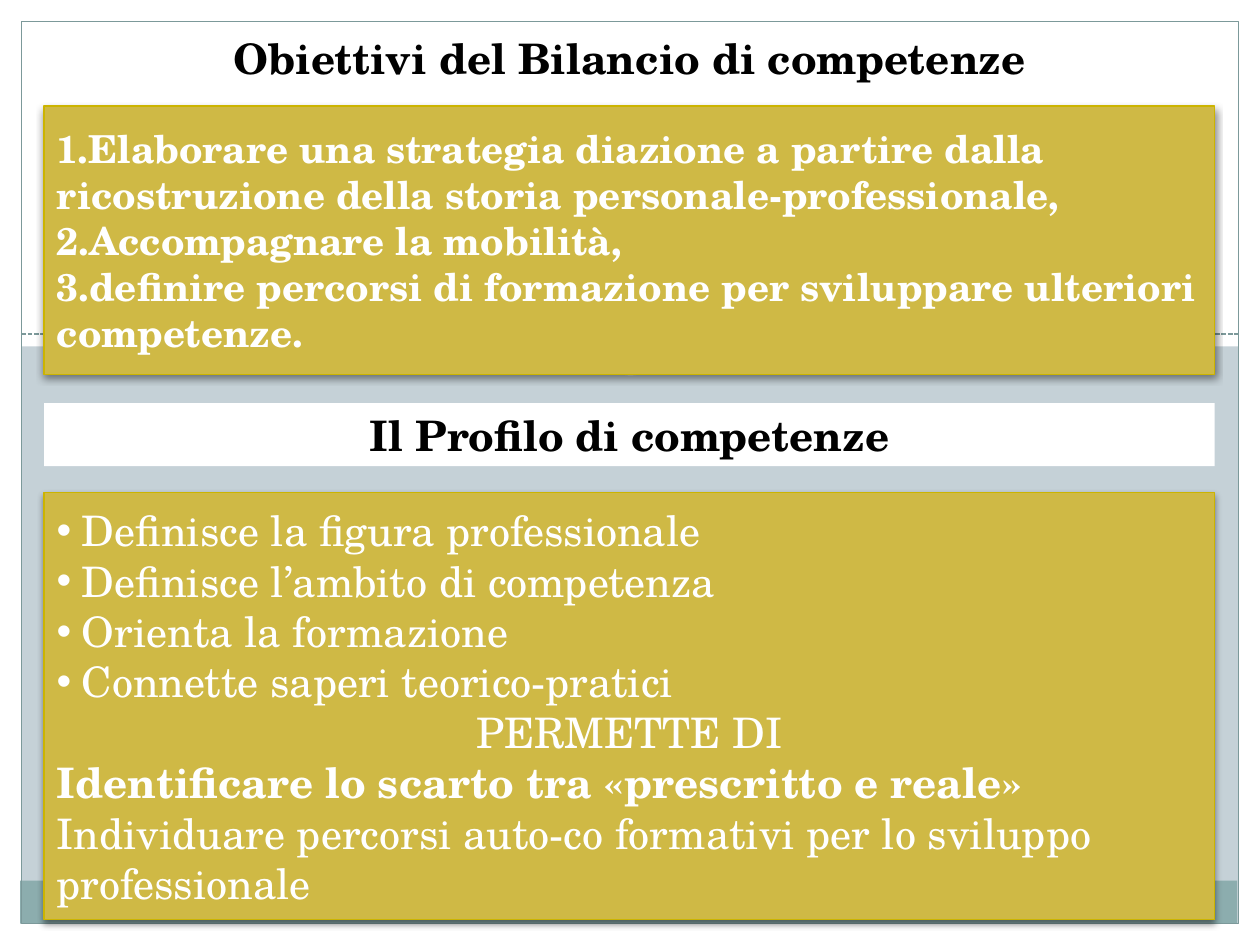
from lxml import etree
from pptx import Presentation
from pptx.dml.color import RGBColor
from pptx.enum.dml import MSO_LINE
from pptx.enum.shapes import MSO_CONNECTOR, MSO_SHAPE
from pptx.enum.text import MSO_ANCHOR, MSO_AUTO_SIZE, PP_ALIGN
from pptx.oxml import parse_xml
from pptx.oxml.ns import nsdecls, qn
from pptx.util import Inches, Pt

RECT, OVAL = MSO_SHAPE.RECTANGLE, MSO_SHAPE.OVAL
LEFT, CENTER = PP_ALIGN.LEFT, PP_ALIGN.CENTER
MIDDLE, NO_FIT = MSO_ANCHOR.MIDDLE, MSO_AUTO_SIZE.NONE
WHITE = RGBColor(0xFF, 0xFF, 0xFF)
BLACK = RGBColor(0, 0, 0)
BACKGROUND = RGBColor(0xC5, 0xD1, 0xD7)
TEAL = RGBColor(0x8C, 0xAD, 0xAE)
FRAME = RGBColor(0x7C, 0x99, 0x9A)
GOLD = RGBColor(0xCF, 0xB9, 0x45)
GOLD_EDGE = RGBColor(0xCC, 0xB4, 0x00)
FONT = "TeX Gyre Schola"
BOX_LEFT, BOX_WIDTH = 0.35, 9.29

DECOR = [
    (RECT, (0, 7.33, 10, 0.17), WHITE, None),
    (RECT, (9.83, 0, 0.17, 7.5), WHITE, None),
    (RECT, (0, 0, 0.17, 7.5), WHITE, None),
    (RECT, (0, 0, 10, 2.75), WHITE, None),
    (RECT, (0.16, 6.99, 9.66, 0.34), TEAL, None),
    (RECT, (0.17, 0.17, 9.66, 7.16), None, FRAME),
    (OVAL, (4.67, 2.31, 0.67, 0.67), WHITE, None),
]

TITLE = [("Obiettivi del Bilancio di competenze", None, CENTER, True)]
GOALS = [
    ("Elaborare una strategia diazione a partire dalla ricostruzione della "
     "storia personale-professionale,", "number", LEFT, True),
    ("Accompagnare la mobilità,", "number", LEFT, True),
    ("definire percorsi di formazione per sviluppare ulteriori competenze.",
     "number", LEFT, True),
]
PROFILE_TITLE = [("Il Profilo di competenze", None, CENTER, True)]
PROFILE = [
    ("Definisce la figura professionale", "bullet", LEFT, False),
    ("Definisce l’ambito di competenza", "bullet", LEFT, False),
    ("Orienta la formazione", "bullet", LEFT, False),
    ("Connette saperi teorico-pratici", "bullet", LEFT, False),
    ("PERMETTE DI", None, CENTER, False),
    ("Identificare lo scarto tra «prescritto e reale»", None, LEFT, True),
    ("Individuare percorsi auto-co formativi per lo sviluppo professionale",
     None, LEFT, False),
]

MARKERS = {
    None: ("a:buNone", {}, 0),
    "number": ("a:buAutoNum", {"type": "arabicPeriod"}, 0),
    "bullet": ("a:buChar", {"char": "•"}, 0.2),
}
SHADOW = (f'<a:effectLst {nsdecls("a")}><a:outerShdw blurRad="{Pt(4)}" dist="{Pt(2)}" '
          'dir="5400000" rotWithShape="0"><a:srgbClr val="000000"><a:alpha val="45000"/>'
          '</a:srgbClr></a:outerShdw></a:effectLst>')


def paint(sp, fill, line):
    if fill is None:
        sp.fill.background()
    else:
        sp.fill.solid()
        sp.fill.fore_color.rgb = fill
    if line is None:
        sp.line.fill.background()
    else:
        sp.line.color.rgb = line
        sp.line.width = Pt(0.75)


def add_shape(s, kind, box, fill, line):
    sp = s.shapes.add_shape(kind, *map(Inches, box))
    sp.shadow.inherit = False
    paint(sp, fill, line)
    return sp


def set_marker(p, marker):
    tag, attributes, indent = MARKERS[marker]
    pPr = p._p.get_or_add_pPr()
    pPr.set("marL", str(Inches(indent)))
    pPr.set("indent", str(-Inches(indent)))
    etree.SubElement(pPr, qn(tag), attributes)


def write(sp, lines, size, color):
    tf = sp.text_frame
    for name, value in {"word_wrap": True, "auto_size": NO_FIT,
                        "vertical_anchor": MIDDLE}.items():
        setattr(tf, name, value)
    for i, (text, marker, align, bold) in enumerate(lines):
        p = tf.paragraphs[0] if i == 0 else tf.add_paragraph()
        for name, value in {"alignment": align, "line_spacing": 1.0,
                            "space_before": Pt(0), "space_after": Pt(0)}.items():
            setattr(p, name, value)
        set_marker(p, marker)
        r = p.add_run()
        r.text = text
        for name, value in {"name": FONT, "size": Pt(size), "bold": bold}.items():
            setattr(r.font, name, value)
        r.font.color.rgb = color


def main():
    prs = Presentation()
    prs.slide_width, prs.slide_height = Inches(10), Inches(7.5)
    s = prs.slides.add_slide(prs.slide_layouts[3])
    s.background.fill.solid()
    s.background.fill.fore_color.rgb = BACKGROUND
    title, goals, profile = [s.placeholders[i] for i in range(3)]
    extra = [s.placeholders[i.placeholder_format.idx] for i in s.placeholders
             if i.placeholder_format.idx > 2]
    for sp in extra:
        sp._element.getparent().remove(sp._element)

    for item in DECOR:
        add_shape(s, *item)
    divider = s.shapes.add_connector(MSO_CONNECTOR.STRAIGHT, Inches(0.17), Inches(2.65),
                                     Inches(9.83), Inches(2.65))
    divider.line.color.rgb = FRAME
    divider.line.width = Pt(0.9)
    divider.line.dash_style = MSO_LINE.SQUARE_DOT
    etree.SubElement(divider._element.spPr, qn("a:effectLst"))

    heading = add_shape(s, RECT, (BOX_LEFT, 3.2, BOX_WIDTH, 0.5), WHITE, None)
    blocks = [
        (title, 0.21, 0.5, TITLE, 24, False),
        (goals, 0.84, 2.13, GOALS, 22, True),
        (heading, 3.2, 0.5, PROFILE_TITLE, 24, False),
        (profile, 3.91, 3.39, PROFILE, 24, True),
    ]
    for sp, top, height, lines, size, gold in blocks:
        for name, value in {"left": BOX_LEFT, "top": top, "width": BOX_WIDTH,
                            "height": height}.items():
            setattr(sp, name, Inches(value))
        paint(sp, GOLD if gold else WHITE, GOLD_EDGE if gold else None)
        write(sp, lines, size, WHITE if gold else BLACK)
        if gold:
            sp._element.spPr.append(parse_xml(SHADOW))
        s.shapes._spTree.append(sp._element)

    prs.save("out.pptx")


if __name__ == "__main__":
    main()
